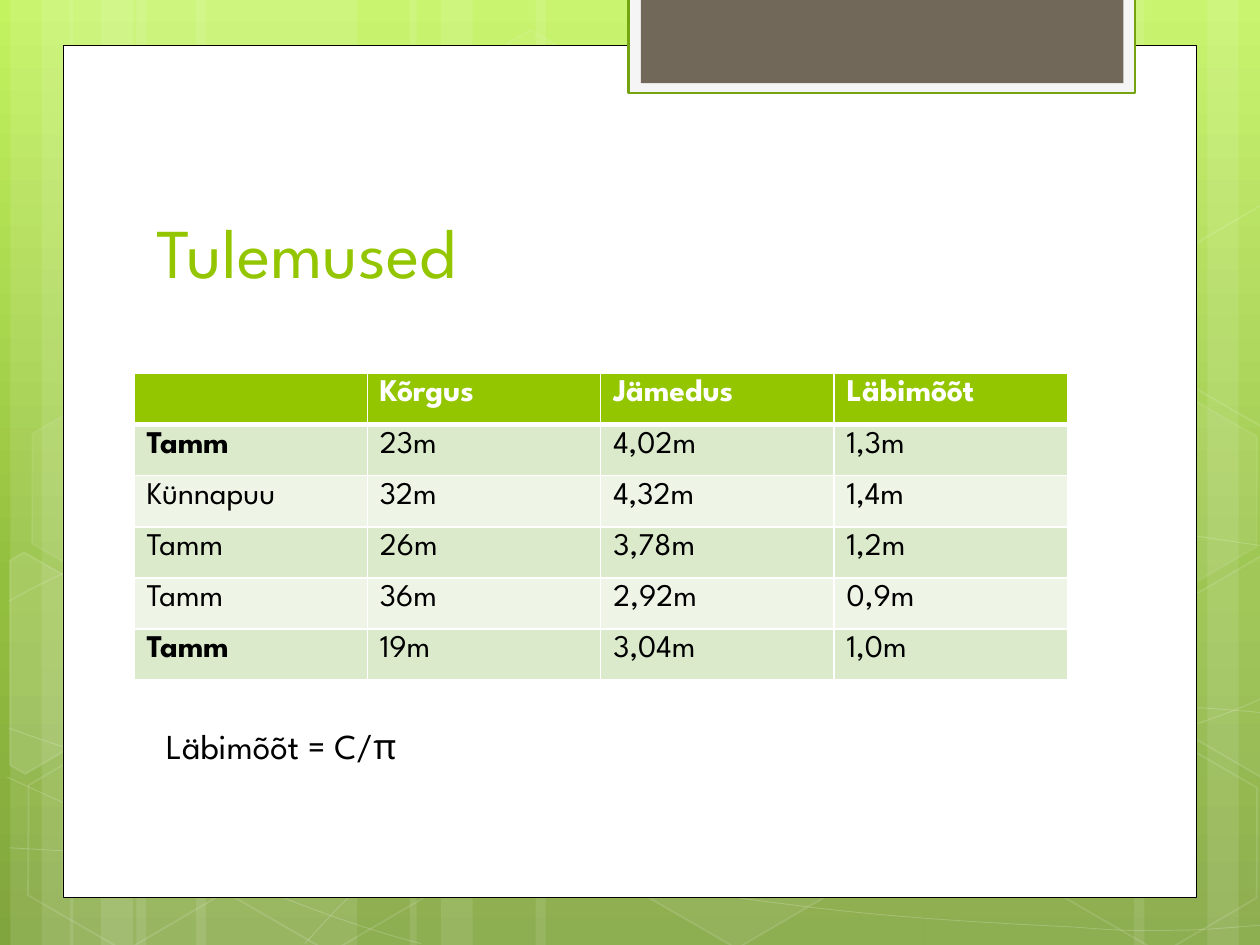
import copy
import math

import lxml.etree
import pptx
import pptx.dml.color
import pptx.enum.shapes
import pptx.enum.text
import pptx.oxml
import pptx.oxml.ns
import pptx.util

Cm, Pt = pptx.util.Cm, pptx.util.Pt
SHAPE = pptx.enum.shapes.MSO_SHAPE
FONT = "League Spartan"
COLORS = {
    "white": "FFFFFF", "black": "000000", "green": "94C600", "edge": "74A510",
    "frame": "F5F5F5", "brown": "71685A", "band": "DCEACC", "pale": "EEF5E7",
    "lime": "C3F35F", "leaf": "93BF3F", "moss": "81A53E",
}
BACKGROUND = [(0, "lime"), (0.62, "leaf"), (1, "moss")]
STRIPES = [(x + dx, w) for x, wide in [(0.21, 4.45), (1.41, 4.45), (8.26, 7.82)]
           for dx, w in [(2.54, wide), (0, 1.27), (0.63, 2.11)]]
STRIPES += [(18.62, 4.45), (24.34, 1.27), (22.86, 2.11)]
WAVES = [
    [(0.18, 17.09), (1.55, 17.17), (2.92, 17.25), (4.83, 17.22), (6.73, 17.2), (9.09, 17.15),
     (11.63, 16.89), (14.17, 16.64), (17.78, 16.15), (20.12, 15.67), (22.43, 15.19),
     (24.82, 14.43), (25.58, 14)],
    [(0.18, 12.12), (0.91, 11.71), (1.65, 11.33), (3.07, 10.95), (4.52, 10.57), (6.58, 10.01),
     (8.81, 9.83), (11.07, 9.65), (13.82, 9.63), (16.61, 9.83), (19.41, 10.03),
     (24.05, 10.82), (25.58, 11.02)],
    [(0.15, 15.67), (3.23, 17.07), (6.27, 18.47), (8.48, 19.02)],
    [(0.18, 14.68), (0.97, 14.96), (1.78, 15.24), (3.25, 15.65), (4.72, 16.03), (6.93, 16.66),
     (9.07, 17.09), (11.18, 17.53), (13.84, 17.98), (15.95, 18.24), (18.06, 18.52),
     (20.32, 18.62), (21.67, 18.69), (22.99, 18.8), (23.34, 18.75), (24, 18.75),
     (24.66, 18.72), (25.12, 18.67), (25.58, 18.64)],
    [(6.15, 19.02), (6.6, 18.52), (7.06, 18.01), (7.67, 17.55), (8.28, 17.09), (9.14, 16.59),
     (9.86, 16.23), (10.57, 15.88), (11, 15.72), (11.94, 15.47), (12.85, 15.21),
     (14.55, 14.86), (15.44, 14.68), (16.36, 14.5), (16.48, 14.5), (17.27, 14.45),
     (18.08, 14.38), (19.3, 14.3), (20.17, 14.27), (21.06, 14.25), (22.5, 14.27),
     (24.21, 14.27), (24.66, 14.3), (25.1, 14.33), (25.55, 14.38)],
]
HEXAGONS = [
    (8.48, 0.91, 4, 8), (12.62, 14.96, 6, 12), (0.28, 15.01, 0, 12),
    (0.36, 7.92, 7, 8), (4.42, 15.04, 0, 12), (19.13, 11.51, 10, 12),
    (21.18, 15.06, 0, 12), (21.18, 7.98, 7, 8),
]
LEFT_CUT = [(0.2, 11.3), (0.48, 11.13), (2.44, 12.24), (2.41, 14.48), (0.51, 15.6), (0.2, 15.42)]
RIGHT_CUT = [(23.52, 12.32), (25.43, 11.2), (25.63, 11.33), (25.63, 15.57), (25.45, 15.67),
             (23.52, 14.55)]
CUT_HEXAGONS = [(LEFT_CUT, (0.91, 13.59), 0, 10), (RIGHT_CUT, (25.02, 13.21), 0, 4),
                (RIGHT_CUT, (25.02, 13.21), 7.07, 0)]
ROWS = [
    ("", "Kõrgus", "Jämedus", "Läbimõõt"),
    ("Tamm", "23m", "4,02m", "1,3m"),
    ("Künnapuu", "32m", "4,32m", "1,4m"),
    ("Tamm", "26m", "3,78m", "1,2m"),
    ("Tamm", "36m", "2,92m", "0,9m"),
    ("Tamm", "19m", "3,04m", "1,0m"),
]
BOLD_NAMES = (1, 5)


def rgb(name):
    """Return the named colour."""
    return pptx.dml.color.RGBColor.from_string(COLORS[name])


def style(sp, fill=None, line=None, width=1, fill_alpha=100, line_alpha=100):
    """Set fill, line and opacity in percent, without shadow."""
    sp.shadow.inherit = False
    for part, name in ((sp.fill, fill), (sp.line.fill, line)):
        if name:
            part.solid()
            part.fore_color.rgb = rgb(name)
        else:
            part.background()
    if line:
        sp.line.width = Pt(width)
    for route, alpha in (("p:spPr", fill_alpha), ("p:spPr/a:ln", line_alpha)):
        for color in sp._element.xpath(f"{route}/a:solidFill/a:srgbClr"):
            if alpha < 100:
                opacity = lxml.etree.SubElement(color, pptx.oxml.ns.qn("a:alpha"))
                opacity.set("val", str(alpha * 1000))


def write(p, text, size, color, bold=False):
    """Write one paragraph in the slide font."""
    p.text = text
    p.font.name, p.font.size, p.font.bold = FONT, Pt(size), bold
    p.font.color.rgb = rgb(color)


def add_box(s, kind, x, y, w, h):
    """Add a preset shape measured in centimetres."""
    return s.shapes.add_shape(kind, Cm(x), Cm(y), Cm(w), Cm(h))


def add_outline(s, points, close):
    """Add a freeform through the points."""
    points = [(Cm(x), Cm(y)) for x, y in points]
    builder = s.shapes.build_freeform(*points[0])
    builder.add_line_segments(points[1:], close=close)
    return builder.convert_to_shape()


def add_wave(s, points):
    """Draw a chain of cubic curves from its control points."""
    sp = add_outline(s, points, False)
    outline = sp._element.xpath(".//a:path")[0]
    lines = outline.xpath("a:lnTo")
    for i in range(0, len(lines), 3):
        curve = lxml.etree.SubElement(outline, pptx.oxml.ns.qn("a:cubicBezTo"))
        for line in lines[i:i + 3]:
            curve.append(line[0])
            outline.remove(line)
    style(sp, None, "white", 0.5, line_alpha=20)


def add_cut_hexagon(s, points, center, rise, alpha):
    """Draw a hexagon cut by the slide edge, turned by 30 degrees."""
    cx, cy = center
    cos, sin = math.cos(math.radians(30)), math.sin(math.radians(30))
    upright = [(cx + (x - cx) * cos + (y - cy) * sin,
                cy - rise - (x - cx) * sin + (y - cy) * cos) for x, y in points]
    sp = add_outline(s, upright, True)
    sp.rotation = 30
    style(sp, "white" if alpha else None, "white", 1, alpha, 12)


def add_background(s, height):
    """Draw the gradient, stripes, waves and hexagons."""
    fill = s.background.fill
    fill.gradient()
    fill.gradient_angle = 270
    stops = s._element.xpath(".//p:bgPr//a:gsLst")[0]
    stops.append(copy.deepcopy(stops[-1]))
    for stop, (position, color) in zip(fill.gradient_stops, BACKGROUND):
        stop.position = position
        stop.color.rgb = rgb(color)
    for x, w in STRIPES:
        style(add_box(s, SHAPE.RECTANGLE, x, 0, w, height), "white", fill_alpha=10)
    for points in WAVES:
        add_wave(s, points)
    for x, y, fill_alpha, line_alpha in HEXAGONS:
        sp = add_box(s, SHAPE.HEXAGON, x, y, 4.45, 3.86)
        sp.adjustments[0] = 0.285
        sp.rotation = 30
        style(sp, "white" if fill_alpha else None, "white", 1, fill_alpha, line_alpha)
    for cut in CUT_HEXAGONS:
        add_cut_hexagon(s, *cut)


def add_panel(s, x, y, w, h):
    """Draw the white panel and the tab over its top edge."""
    style(add_box(s, SHAPE.RECTANGLE, x, y, w, h), "white", "black", 0.5)
    style(add_box(s, SHAPE.RECTANGLE, x + 11.4, y - 0.97, 10.21, 1.93), "frame", "edge", 1.25)
    style(add_box(s, SHAPE.RECTANGLE, x + 11.65, y - 0.97, 9.73, 1.73), "brown")


def add_title(s, x, y, w, h):
    """Place the title placeholder above the panel."""
    sp = s.shapes.title
    s.shapes._spTree.append(sp._element)
    sp.left, sp.top, sp.width, sp.height = Cm(x), Cm(y), Cm(w), Cm(h)
    tf = sp.text_frame
    tf.vertical_anchor = pptx.enum.text.MSO_ANCHOR.BOTTOM
    write(tf.paragraphs[0], "Tulemused", 40, "green")
    tf.paragraphs[0].alignment = pptx.enum.text.PP_ALIGN.LEFT


def set_borders(cell, bottom, top):
    """Give a cell white borders, with bottom and top widths in points."""
    tc_pr = cell._tc.get_or_add_tcPr()
    for i, (side, width) in enumerate((("L", 1), ("R", 1), ("T", top), ("B", bottom))):
        tc_pr.insert(i, pptx.oxml.parse_xml(
            f'<a:ln{side} {pptx.oxml.ns.nsdecls("a")} w="{Pt(width)}"><a:solidFill>'
            f'<a:srgbClr val="{COLORS["white"]}"/></a:solidFill></a:ln{side}>'))


def add_results(s, x, y, w, h):
    """Build the table of measured trees."""
    table = s.shapes.add_table(len(ROWS), len(ROWS[0]), Cm(x), Cm(y), Cm(w), Cm(h)).table
    for i, row in enumerate(ROWS):
        for j, text in enumerate(row):
            cell = table.cell(i, j)
            cell.fill.solid()
            cell.fill.fore_color.rgb = rgb("green" if i == 0 else "band" if i % 2 else "pale")
            set_borders(cell, 3 if i == 0 else 1, 3 if i == 1 else 1)
            bold = i == 0 or (j == 0 and i in BOLD_NAMES)
            write(cell.text_frame.paragraphs[0], text, 18, "black" if i else "white", bold)


def add_formula(s, x, y, w, h):
    """Write the diameter formula."""
    tf = s.shapes.add_textbox(Cm(x), Cm(y), Cm(w), Cm(h)).text_frame
    tf.word_wrap = True
    write(tf.paragraphs[0], "Läbimõõt = C/π", 20, "black")


def main():
    """Build and save the slide."""
    prs = pptx.Presentation()
    prs.slide_width, prs.slide_height = Cm(25.4), Cm(19.05)
    s = prs.slides.add_slide(prs.slide_layouts[5])
    add_background(s, 19.05)
    add_panel(s, 1.27, 0.92, 22.86, 17.18)
    add_title(s, 2.9, 2.86, 19.51, 3.17)
    add_results(s, 2.7, 7.53, 18.82, 6.18)
    add_formula(s, 3.1, 14.48, 18.39, 1.12)
    prs.save("out.pptx")


if __name__ == "__main__":
    main()
